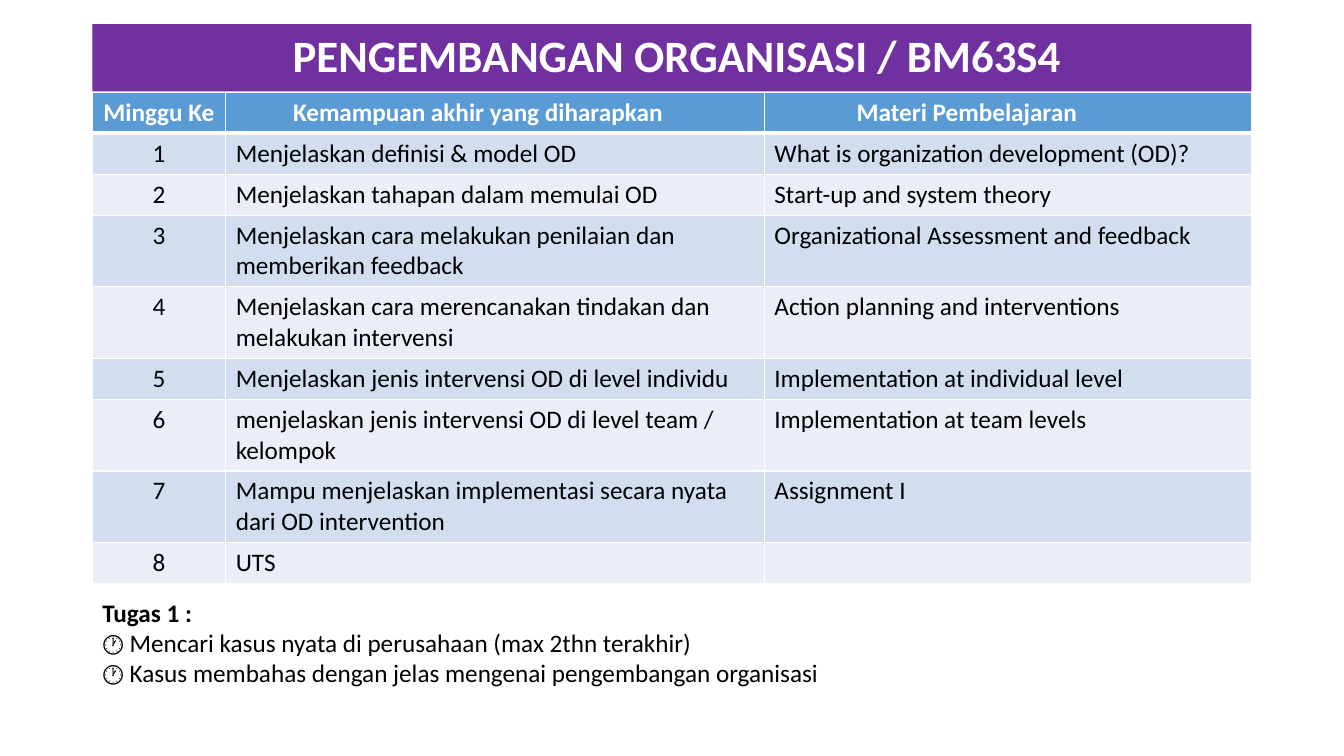
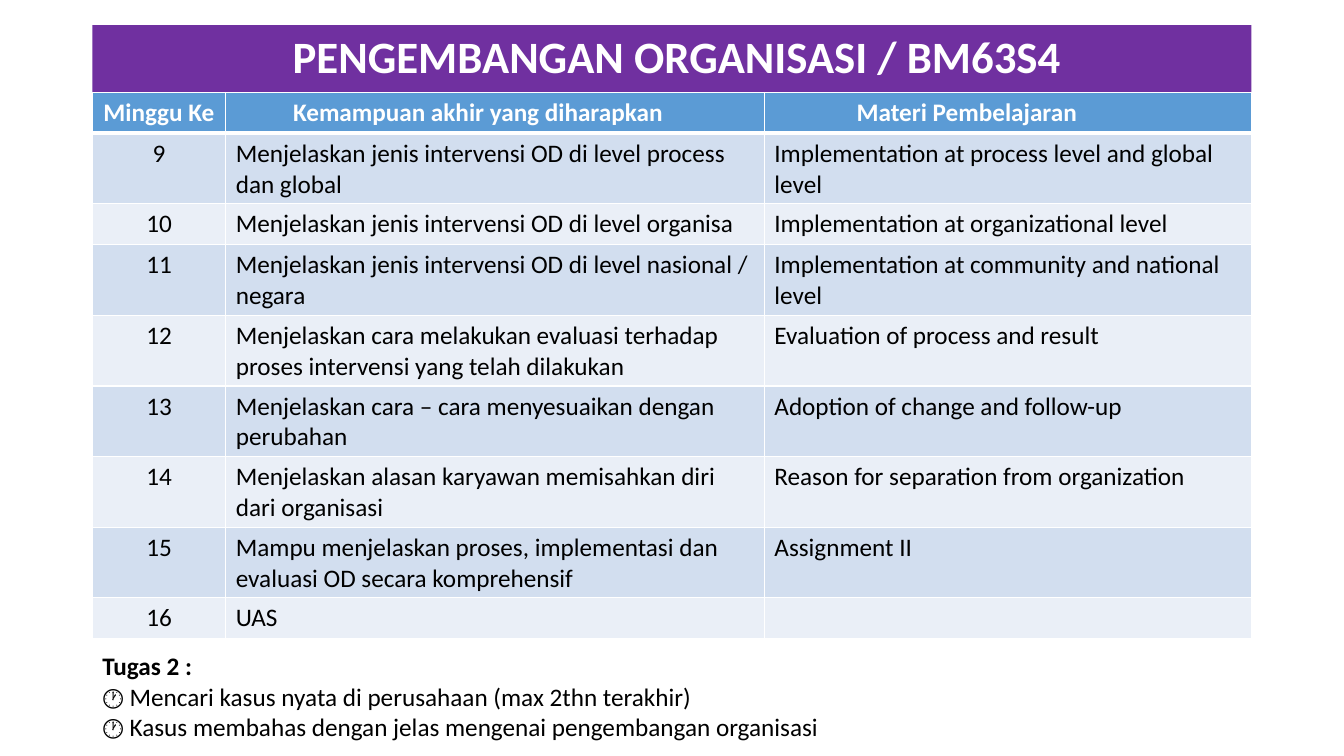
"""Build the two-slide weekly plan of the organisation development course."""
from dataclasses import dataclass

from pptx import Presentation
from pptx.dml.color import RGBColor as Rgb
from pptx.enum.shapes import MSO_SHAPE as Shape
from pptx.enum.text import MSO_ANCHOR as Anchor, PP_ALIGN as Align
from pptx.oxml import parse_xml
from pptx.oxml.ns import nsdecls
from pptx.util import Pt

PX = 9525


@dataclass(frozen=True)
class Theme:
    font: str = "Calibri"
    title_size: int = 32
    body_size: int = 18
    purple: str = "7030A0"
    blue: str = "5B9BD5"
    bands: tuple = ("D2DEEF", "EAEFF7")
    white: str = "FFFFFF"
    black: str = "000000"
    thin: int = 1
    thick: int = 3


theme = Theme()


def style_text(paragraph, size, color, bold=False, align=Align.LEFT):
    paragraph.alignment = align
    for run in paragraph.runs:
        run.font.name = theme.font
        run.font.size = Pt(size)
        run.font.bold = bold
        run.font.color.rgb = Rgb.from_string(color)


def style_cell(cell, fill, top, bottom):
    properties = cell._tc.get_or_add_tcPr()
    for side, width in (("L", theme.thin), ("R", theme.thin), ("T", top), ("B", bottom)):
        properties.append(parse_xml(
            f'<a:ln{side} {nsdecls("a")} w="{Pt(width)}"><a:solidFill>'
            f'<a:srgbClr val="{theme.white}"/></a:solidFill></a:ln{side}>'))
    cell.fill.solid()
    cell.fill.fore_color.rgb = Rgb.from_string(fill)


LEFT, WIDTH = 88, 1104
TITLE_HEIGHT, TABLE_TOP, ROW_HEIGHT = 64, 88, 39
COLUMN_WIDTHS = (127, 513, 464)
HEADER_RIGHT_MARGINS = (10, 42, 88)

COURSE = "PENGEMBANGAN ORGANISASI / BM63S4"
HEADERS = ("Minggu Ke", "Kemampuan akhir yang diharapkan", "Materi Pembelajaran")
TASK_STEPS = (
    "🕐 Mencari kasus nyata di perusahaan (max 2thn terakhir)",
    "🕐 Kasus membahas dengan jelas mengenai pengembangan organisasi",
)

first_half = (
    ("Menjelaskan definisi & model OD", "What is organization development (OD)?"),
    ("Menjelaskan tahapan dalam memulai OD", "Start-up and system theory"),
    ("Menjelaskan cara melakukan penilaian dan memberikan feedback",
     "Organizational Assessment and feedback"),
    ("Menjelaskan cara merencanakan tindakan dan melakukan intervensi",
     "Action planning and interventions"),
    ("Menjelaskan jenis intervensi OD di level individu",
     "Implementation at individual level"),
    ("menjelaskan jenis intervensi OD di level team / kelompok",
     "Implementation at team levels"),
    ("Mampu menjelaskan implementasi secara nyata dari OD intervention", "Assignment I"),
    ("UTS", ""),
)
second_half = (
    ("Menjelaskan jenis intervensi OD di level process dan global",
     "Implementation at process level and global level"),
    ("Menjelaskan jenis intervensi OD di level organisa",
     "Implementation at organizational level"),
    ("Menjelaskan jenis intervensi OD di level nasional / negara",
     "Implementation at community and national level"),
    ("Menjelaskan cara melakukan evaluasi terhadap proses intervensi yang telah dilakukan",
     "Evaluation of process and result"),
    ("Menjelaskan cara – cara menyesuaikan dengan perubahan",
     "Adoption of change and follow-up"),
    ("Menjelaskan alasan karyawan memisahkan diri dari organisasi",
     "Reason for separation from organization"),
    ("Mampu menjelaskan proses, implementasi dan evaluasi OD secara komprehensif",
     "Assignment II"),
    ("UAS", ""),
)
halves = (
    (first_half, 1, 23, "Tugas 1 :", 564, 126),
    (second_half, 9, 24, "Tugas 2 :", 615, 97),
)

deck = Presentation()
deck.slide_width, deck.slide_height = 1280 * PX, 720 * PX

for lessons, first_week, title_top, task_name, task_top, task_height in halves:
    slide = deck.slides.add_slide(deck.slide_layouts[6])

    banner = slide.shapes.add_shape(
        Shape.RECTANGLE, LEFT * PX, title_top * PX, WIDTH * PX, TITLE_HEIGHT * PX)
    banner.shadow.inherit = False
    banner.fill.solid()
    banner.fill.fore_color.rgb = Rgb.from_string(theme.purple)
    banner.line.fill.background()
    banner.text_frame.text = COURSE
    banner.text_frame.word_wrap = True
    banner.text_frame.vertical_anchor = Anchor.MIDDLE
    banner.text_frame.margin_left = 19 * PX
    heading = banner.text_frame.paragraphs[0]
    heading.line_spacing = 0.9
    style_text(heading, theme.title_size, theme.white, True, Align.CENTER)

    plan = slide.shapes.add_table(
        len(lessons) + 1, len(HEADERS), LEFT * PX, TABLE_TOP * PX,
        WIDTH * PX, ROW_HEIGHT * (len(lessons) + 1) * PX).table
    for column, width in zip(plan.columns, COLUMN_WIDTHS):
        column.width = width * PX

    for index, (header, margin) in enumerate(zip(HEADERS, HEADER_RIGHT_MARGINS)):
        cell = plan.cell(0, index)
        cell.text_frame.text = header
        cell.margin_right = margin * PX
        style_cell(cell, theme.blue, theme.thin, theme.thick)
        style_text(cell.text_frame.paragraphs[0], theme.body_size, theme.white,
                   True, Align.CENTER)

    for row, (ability, material) in enumerate(lessons, start=1):
        week = str(first_week + row - 1)
        for index, wording in enumerate((week, ability, material)):
            cell = plan.cell(row, index)
            cell.text_frame.text = wording
            style_cell(cell, theme.bands[(row - 1) % 2],
                       theme.thick if row == 1 else theme.thin, theme.thin)
            style_text(cell.text_frame.paragraphs[0], theme.body_size, theme.black,
                       align=Align.LEFT if index else Align.CENTER)

    task = slide.shapes.add_textbox(
        LEFT * PX, task_top * PX, WIDTH * PX, task_height * PX).text_frame
    task.word_wrap = True
    task.text = "\n".join((task_name, *TASK_STEPS))
    for index, paragraph in enumerate(task.paragraphs):
        style_text(paragraph, theme.body_size, theme.black, bold=index == 0)

deck.save("out.pptx")
